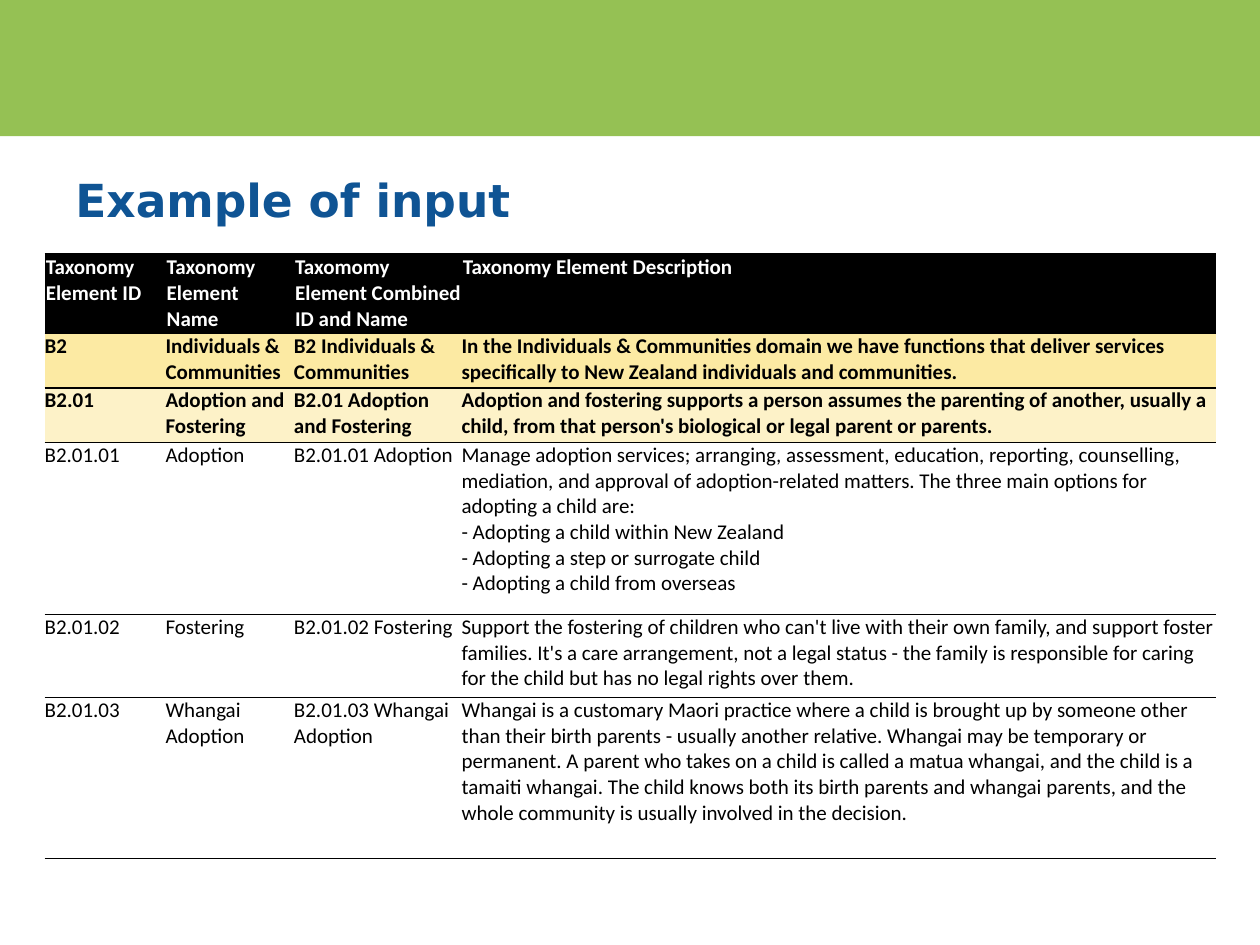
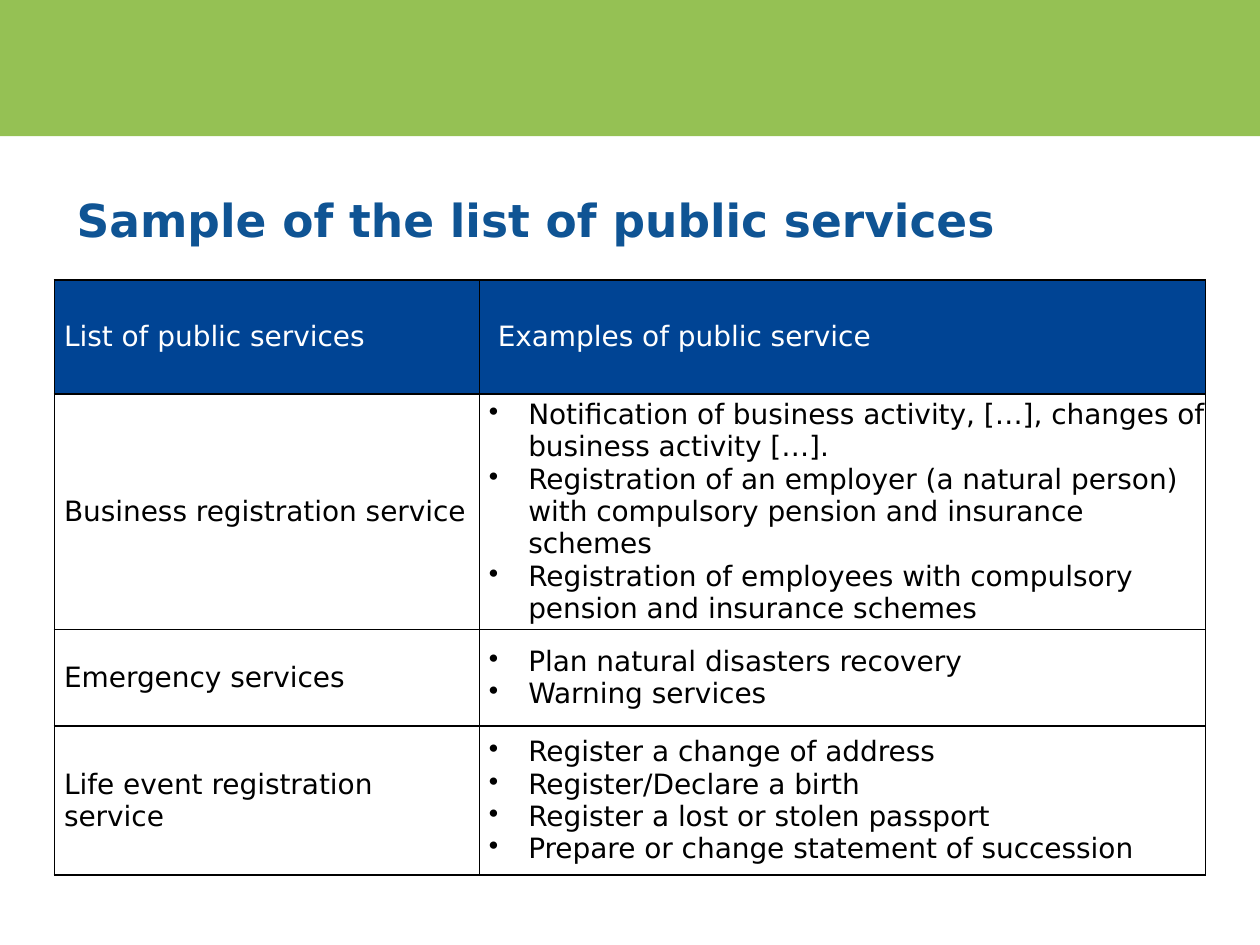
import dataclasses

import lxml.etree
import pptx
import pptx.dml.color
import pptx.enum.shapes
import pptx.enum.text
import pptx.oxml.ns
import pptx.util

Pt = pptx.util.Pt
qn = pptx.oxml.ns.qn
MIDDLE = pptx.enum.text.MSO_ANCHOR.MIDDLE
TOP = pptx.enum.text.MSO_ANCHOR.TOP


@dataclasses.dataclass(frozen=True)
class Theme:
    band: str = "95C154"
    title: str = "0F5494"
    header: str = "004494"
    domain: str = "FCEAA3"
    group: str = "FDF2C8"
    black: str = "000000"
    white: str = "FFFFFF"
    sans: str = "DejaVu Sans"
    table_font: str = "Calibri"
    title_size: float = 26
    taxonomy_size: float = 12
    service_size: float = 16
    thin: float = 0.5
    thick: float = 1


THEME = Theme()

TAXONOMY_COLUMNS = [69.1, 73.4, 95.8, 430.9]
TAXONOMY_HEIGHTS = [45.7, 31, 31.4, 98.3, 47.4, 92]
TAXONOMY_ROWS = [
    ["Taxonomy Element ID", "Taxonomy Element Name",
     "Taxomomy Element Combined ID and Name", "Taxonomy Element Description"],
    ["B2", "Individuals & Communities", "B2 Individuals & Communities",
     "In the Individuals & Communities domain we have functions that deliver services "
     "specifically to New Zealand individuals and communities."],
    ["B2.01", "Adoption and Fostering", "B2.01 Adoption and Fostering",
     "Adoption and fostering supports a person assumes the parenting of another, usually "
     "a child, from that person's biological or legal parent or parents."],
    ["B2.01.01", "Adoption", "B2.01.01 Adoption",
     "Manage adoption services; arranging, assessment, education, reporting, counselling, "
     "mediation, and approval of adoption-related matters. The three main options for "
     "adopting a child are:\n- Adopting a child within New Zealand\n"
     "- Adopting a step or surrogate child\n- Adopting a child from overseas"],
    ["B2.01.02", "Fostering", "B2.01.02 Fostering",
     "Support the fostering of children who can't live with their own family, and support "
     "foster families. It's a care arrangement, not a legal status - the family is "
     "responsible for caring for the child but has no legal rights over them."],
    ["B2.01.03", "Whangai Adoption", "B2.01.03 Whangai Adoption",
     "Whangai is a customary Maori practice where a child is brought up by someone other "
     "than their birth parents - usually another relative. Whangai may be temporary or "
     "permanent. A parent who takes on a child is called a matua whangai, and the child is "
     "a tamaiti whangai. The child knows both its birth parents and whangai parents, and "
     "the whole community is usually involved in the decision."],
]

SERVICE_COLUMNS = [242.8, 414.9]
SERVICE_HEADERS = ["List of public services", "Examples of public service"]
SERVICE_HEIGHTS = [65.3, 130.8, 55.3, 85.2]
SERVICES = {
    "Business registration service": [
        "Notification of business activity, […], changes of business activity […].",
        "Registration of an employer (a natural person) with compulsory pension and "
        "insurance schemes",
        "Registration of employees with compulsory pension and insurance schemes",
    ],
    "Emergency services": ["Plan natural disasters recovery", "Warning services"],
    "Life event registration service": [
        "Register a change of address",
        "Register/Declare a birth",
        "Register a lost or stolen passport",
        "Prepare or change statement of succession",
    ],
}


def rgb(color):
    return pptx.dml.color.RGBColor.from_string(color)


def write(para, text, *, size, font, color, bold=False, bullet=None):
    if bullet:
        properties = para._p.get_or_add_pPr()
        properties.set("marL", str(Pt(22.5)))
        properties.set("indent", str(-Pt(22.5)))
        lxml.etree.SubElement(properties, qn("a:buChar")).set("char", bullet)
    for number, line in enumerate(text.split("\n")):
        if number:
            para.add_line_break()
        span = para.add_run()
        span.text = line
        span.font.size = Pt(size)
        span.font.name = font
        span.font.bold = bold
        span.font.color.rgb = rgb(color)


def set_border(cell, side, width):
    line = lxml.etree.SubElement(cell._tc.get_or_add_tcPr(), qn("a:ln" + side))
    if width:
        line.set("w", str(Pt(width)))
        fill = lxml.etree.SubElement(line, qn("a:solidFill"))
        lxml.etree.SubElement(fill, qn("a:srgbClr")).set("val", THEME.black)
    else:
        lxml.etree.SubElement(line, qn("a:noFill"))


def fill_cell(cell, texts, *, borders, fill=None, anchor=TOP, left=0, top=0, **style):
    for side, width in zip("LRTB", borders):
        set_border(cell, side, width)
    if fill:
        cell.fill.solid()
        cell.fill.fore_color.rgb = rgb(fill)
    else:
        cell.fill.background()
    cell.vertical_anchor = anchor
    cell.margin_left, cell.margin_top = Pt(left), Pt(top)
    cell.margin_right = cell.margin_bottom = 0
    frame = cell.text_frame
    for number, text in enumerate(texts):
        para = frame.add_paragraph() if number else frame.paragraphs[0]
        write(para, text, **style)


def add_grid(page, left, top, widths, heights):
    frame = page.shapes.add_table(len(heights), len(widths), Pt(left), Pt(top),
                                  Pt(sum(widths)), Pt(sum(heights)))
    table = frame.table
    table.first_row = table.horz_banding = False
    for column, width in zip(table.columns, widths):
        column.width = Pt(width)
    for row, height in zip(table.rows, heights):
        row.height = Pt(height)
    return table


def add_page(deck, title, left, top, width):
    page = deck.slides.add_slide(deck.slide_layouts[6])
    band = page.shapes.add_shape(pptx.enum.shapes.MSO_SHAPE.RECTANGLE,
                                 0, 0, deck.slide_width, Pt(77.8))
    band.shadow.inherit = False
    band.fill.solid()
    band.fill.fore_color.rgb = rgb(THEME.band)
    band.line.fill.background()
    box = page.shapes.add_textbox(Pt(left), Pt(top), Pt(width), Pt(73.4))
    box.text_frame.word_wrap = True
    box.text_frame.vertical_anchor = MIDDLE
    write(box.text_frame.paragraphs[0], title, size=THEME.title_size,
          font=THEME.sans, color=THEME.title, bold=True)
    return page


def add_taxonomy_table(page, left, top):
    table = add_grid(page, left, top, TAXONOMY_COLUMNS, TAXONOMY_HEIGHTS)
    fills = [THEME.black, THEME.domain, THEME.group]
    for number, texts in enumerate(TAXONOMY_ROWS):
        is_header = number == 0
        is_heading = number < len(fills)
        above = THEME.thick if is_heading else THEME.thin
        below = THEME.thick if number < len(fills) - 1 else THEME.thin
        for cell, text in zip(table.rows[number].cells, texts):
            fill_cell(cell, [text], borders=[0, 0, above, below],
                      fill=fills[number] if is_heading else None,
                      left=0.7 if is_header else 0, top=0.7 if is_header else 0,
                      size=THEME.taxonomy_size, font=THEME.table_font, bold=is_heading,
                      color=THEME.white if is_header else THEME.black)


def add_service_table(page, left, top):
    table = add_grid(page, left, top, SERVICE_COLUMNS, SERVICE_HEIGHTS)
    shared = dict(borders=[THEME.thick] * 4, anchor=MIDDLE,
                  size=THEME.service_size, font=THEME.sans)
    for column, (text, inset) in enumerate(zip(SERVICE_HEADERS, [5.5, 10.6])):
        fill_cell(table.cell(0, column), [text], fill=THEME.header,
                  color=THEME.white, left=inset, **shared)
    shared.update(fill=THEME.white, color=THEME.black, left=5.5)
    for row, (service, examples) in enumerate(SERVICES.items(), start=1):
        fill_cell(table.cell(row, 0), [service], **shared)
        fill_cell(table.cell(row, 1), examples, bullet="•", **shared)


def main():
    deck = pptx.Presentation()
    deck.slide_width, deck.slide_height = Pt(720), Pt(540)
    page = add_page(deck, "Example of input", 36, 77.3, 648)
    add_taxonomy_table(page, 25.5, 145)
    page = add_page(deck, "Sample of the list of public services", 36.7, 88.6, 664)
    add_service_table(page, 31.1, 160)
    deck.save("out.pptx")


if __name__ == "__main__":
    main()
